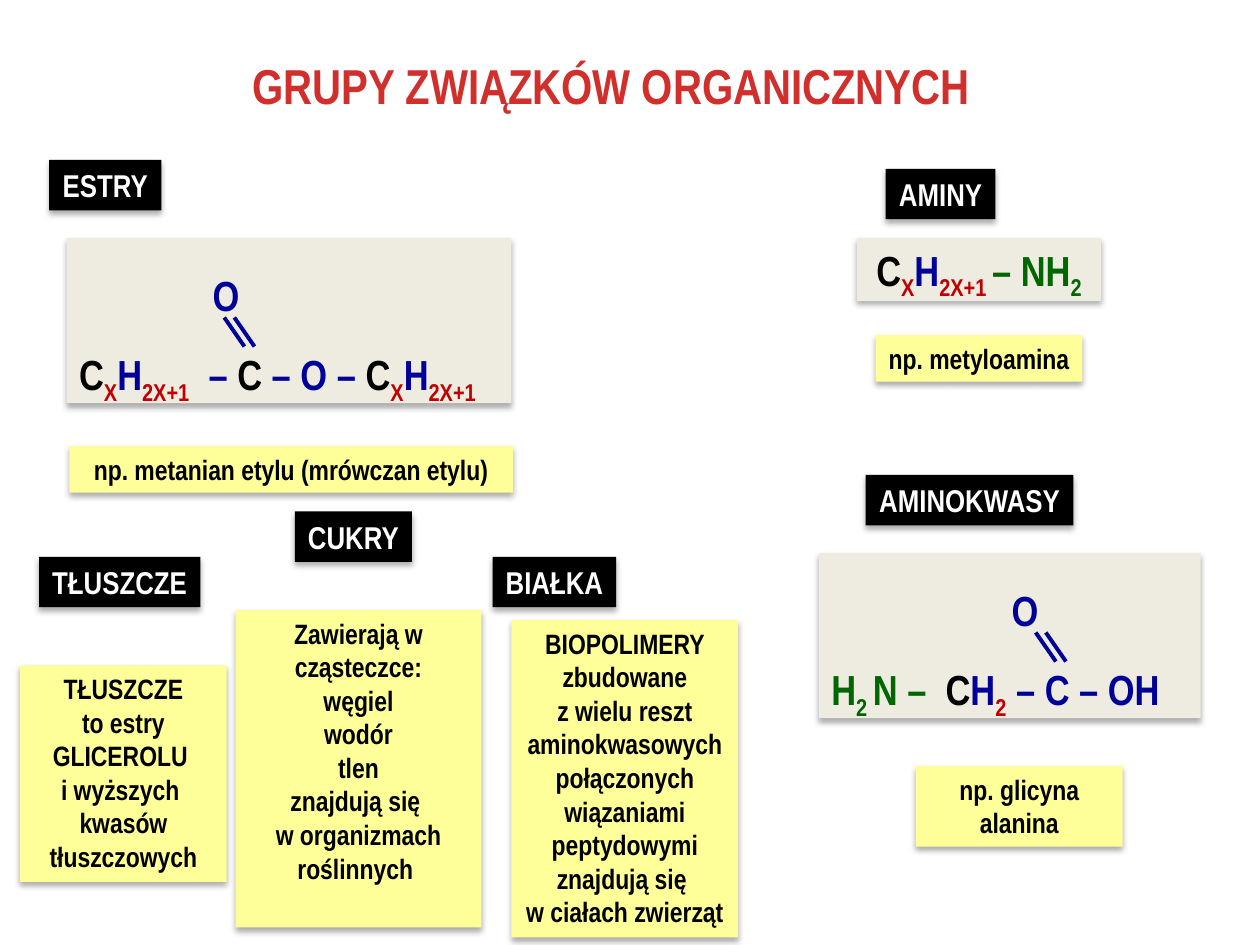
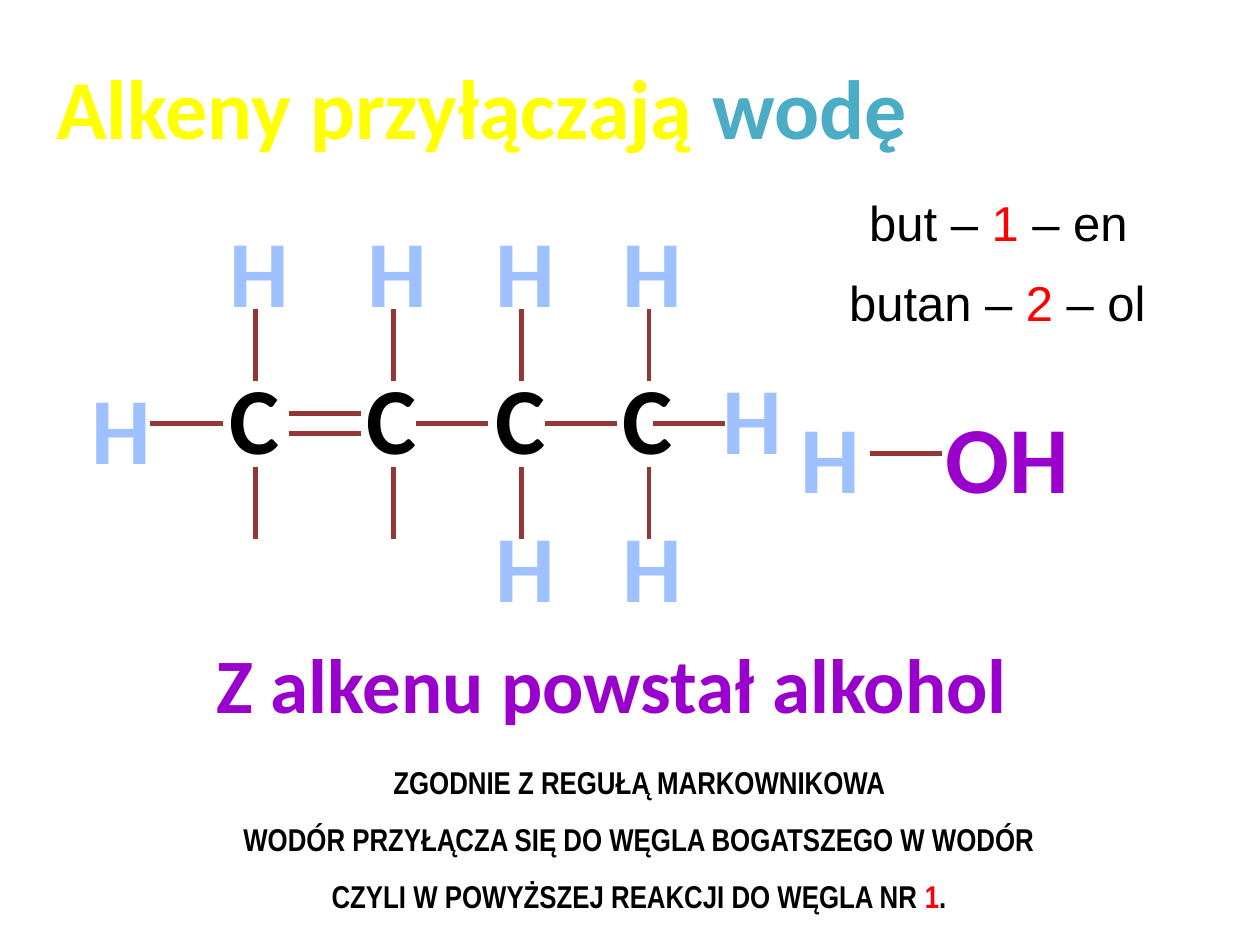
import pptx
import pptx.dml.color
import pptx.enum.shapes
import pptx.enum.text
import pptx.oxml
import pptx.oxml.ns
import pptx.util
from dataclasses import dataclass
from typing import Any, NamedTuple, Optional

Inches = pptx.util.Inches
Pt = pptx.util.Pt
ALIGN = pptx.enum.text.PP_ALIGN

COLORS = {
    "black": "000000", "white": "FFFFFF", "beige": "EEECE1", "paper": "FFFF99",
    "title": "D02F2C", "navy": "000099", "crimson": "C00000", "green": "006600",
    "yellow": "FFFF00", "water": "4BACC6", "hydrogen": "A0C1FF",
    "purple": "9900CC", "bond": "953735", "red": "FF0000",
}


class Run(NamedTuple):
    text: str
    color: Optional[str] = None
    subscript: bool = False
    spacing: float = 0  # extra points after each character


@dataclass(frozen=True)
class TextStyle:
    size: int
    color: str = "black"
    font: str = "Arial Narrow"
    bold: bool = True
    fill: Optional[str] = None
    wrap: bool = False
    align: Any = ALIGN.CENTER
    line_spacing: float = 1.0


class Box(NamedTuple):
    left: float
    top: float
    width: float
    height: float
    style: TextStyle
    paragraphs: list  # each a string or a list of runs


class Bond(NamedTuple):
    center_x: float
    center_y: float
    rotation: int = 0


class Carbonyl(NamedTuple):
    """Formula box with an oxygen joined by a double bond from above."""
    left: float
    top: float
    width: float
    oxygen_indent: float
    bond_left: float
    runs: list


HEADING = TextStyle(28, "title")
LABEL = TextStyle(18, "white", fill="black")
NOTE = TextStyle(16, fill="paper", wrap=True)
FORMULA = TextStyle(24, fill="beige")
CARBONYL = TextStyle(24, "navy", fill="beige", wrap=True, align=ALIGN.LEFT,
                     line_spacing=1.5)
ALKENE_TITLE = TextStyle(48, "yellow", "Calibri")
ALCOHOL_TITLE = TextStyle(44, "purple", "Calibri")
CARBON = TextStyle(54, "black", "Calibri")
HYDROGEN = TextStyle(54, "hydrogen", "Calibri")
HYDROXYL = TextStyle(54, "purple", "Calibri")
COMPOUND = TextStyle(28, font="Arial", bold=False, wrap=True, align=ALIGN.LEFT)
RULE = TextStyle(18, line_spacing=1.5)

ALKYL = [Run("C", "black"), Run("X", "crimson", True), Run("H", "navy"),
         Run("2X+1", "crimson", True)]
WIDE_SPACE = Run(" ", spacing=5.5)

GROUP_BOXES = [
    Box(1.87, 0.39, 5.96, 0.57, HEADING, ["GRUPY ZWIĄZKÓW ORGANICZNYCH"]),
    Box(0.39, 1.27, 0.89, 0.4, LABEL, ["ESTRY"]),
    Box(7.03, 1.34, 0.87, 0.4, LABEL, ["AMINY"]),
    Box(6.87, 3.77, 1.65, 0.4, LABEL, ["AMINOKWASY"]),
    Box(3.91, 4.42, 0.98, 0.4, LABEL, ["BIAŁKA"]),
    Box(2.34, 4.06, 0.93, 0.4, LABEL, ["CUKRY"]),
    Box(0.31, 4.42, 1.28, 0.4, LABEL, ["TŁUSZCZE"]),
    Box(6.8, 1.89, 1.94, 0.5, FORMULA,
        [ALKYL + [Run(" ", subscript=True), Run("– NH", "green"),
                  Run("2", "green", True)]]),
    Box(0.16, 5.28, 1.64, 1.72, NOTE,
        ["TŁUSZCZE", "to estry", "GLICEROLU ", "i wyższych ", "kwasów",
         "tłuszczowych"]),
    Box(4.06, 4.92, 1.8, 2.52, NOTE,
        ["BIOPOLIMERY", "zbudowane", "z wielu reszt", "aminokwasowych",
         "połączonych", "wiązaniami peptydowymi", "znajdują się ",
         "w ciałach zwierząt"]),
    Box(7.27, 6.08, 1.64, 0.64, NOTE, ["np. glicyna", "alanina"]),
    Box(6.95, 2.66, 1.64, 0.37, NOTE, ["np. metyloamina"]),
    Box(0.55, 3.54, 3.52, 0.37, NOTE, ["np. metanian etylu (mrówczan etylu)"]),
    Box(1.87, 4.84, 1.95, 2.52, NOTE,
        ["Zawierają w cząsteczce:", "węgiel", "wodór", "tlen",
         "znajdują się ", "w organizmach roślinnych "]),
]
CARBONYLS = [
    Carbonyl(0.53, 1.89, 3.53, 1.06, 1.78,
             ALKYL + [WIDE_SPACE, Run("– "), Run("C", "black"),
                      Run(" – O – ")] + ALKYL),
    Carbonyl(6.5, 4.39, 3.03, 1.43, 8.22,
             [Run("H", "green"), Run("2 ", "green", True), Run("N –", "green"),
              WIDE_SPACE, Run("C", "black"), Run("H"),
              Run("2", "crimson", True), Run(" – C – OH")]),
]

ALKENE_BOXES = [
    Box(0.31, 0.39, 7.02, 0.91, ALKENE_TITLE,
        [[Run("Alkeny przyłączają "), Run("wodę", "water")]]),
    Box(1.59, 5, 6.54, 0.84, ALCOHOL_TITLE, ["Z alkenu powstał alkohol"]),
    Box(6.8, 1.48, 2.34, 0.57, COMPOUND,
        [[Run("but – "), Run("1", "red"), Run(" – en")]]),
    Box(6.64, 2.11, 2.89, 0.57, COMPOUND,
        [[Run("butan – "), Run("2", "red"), Run(" – ol")]]),
    Box(1.8, 5.86, 6.6, 1.46, RULE,
        ["ZGODNIE Z REGUŁĄ MARKOWNIKOWA ",
         "WODÓR PRZYŁĄCZA SIĘ DO WĘGLA BOGATSZEGO W WODÓR ",
         [Run("CZYLI W POWYŻSZEJ REAKCJI DO WĘGLA NR "), Run("1", "red"),
          Run(". ")]]),
    Box(7.4, 3.12, 1.19, 1.01, HYDROXYL, ["OH"]),
]
CARBON_LEFTS = [1.72, 2.81, 3.83, 4.84]
CARBON_TOP = 2.81
UPPER_HYDROGEN_TOP = 1.64
LOWER_HYDROGEN_TOP = 3.98
SIDE_HYDROGENS = [(0.62, 2.89), (5.63, 2.81), (6.25, 3.12)]
BOND_LENGTH, BOND_THICKNESS = 0.78, 0.16
HORIZONTAL_BONDS = [
    Bond(1.48, 3.36), Bond(2.58, 3.28), Bond(2.58, 3.44, 180),
    Bond(3.59, 3.36), Bond(4.61, 3.36), Bond(5.47, 3.36), Bond(7.19, 3.6),
]


def rgb(name: str) -> pptx.dml.color.RGBColor:
    return pptx.dml.color.RGBColor.from_string(COLORS[name])


def set_attributes(target: Any, values: dict) -> None:
    for name, value in values.items():
        setattr(target, name, value)


def add_shadow(shape: Any) -> None:
    shape._element.spPr.append(pptx.oxml.parse_xml(
        f'<a:effectLst {pptx.oxml.ns.nsdecls("a")}>'
        f'<a:outerShdw blurRad="{Pt(3.5)}" dist="{Pt(2.2)}" dir="5400000" '
        f'rotWithShape="0"><a:srgbClr val="{COLORS["black"]}">'
        '<a:alpha val="32000"/></a:srgbClr></a:outerShdw></a:effectLst>'))


def add_run(paragraph: Any, run: Run, style: TextStyle) -> None:
    text_run = paragraph.add_run()
    text_run.text = run.text
    set_attributes(text_run.font, {
        "name": style.font, "size": Pt(style.size), "bold": style.bold})
    text_run.font.color.rgb = rgb(run.color or style.color)
    properties = text_run._r.get_or_add_rPr()
    if run.subscript:
        properties.set("baseline", "-25000")
    if run.spacing:
        properties.set("spc", str(round(run.spacing * 100)))


def add_box(slide: Any, box: Box) -> Any:
    style = box.style
    shape = slide.shapes.add_textbox(*(Inches(value) for value in box[:4]))
    if style.fill:
        shape.fill.solid()
        shape.fill.fore_color.rgb = rgb(style.fill)
        add_shadow(shape)
    frame = shape.text_frame
    set_attributes(frame, {
        "word_wrap": style.wrap,
        "auto_size": pptx.enum.text.MSO_AUTO_SIZE.NONE,
        "vertical_anchor": pptx.enum.text.MSO_ANCHOR.TOP,
    })
    for index, content in enumerate(box.paragraphs):
        paragraph = frame.add_paragraph() if index else frame.paragraphs[0]
        set_attributes(paragraph, {
            "alignment": style.align, "line_spacing": style.line_spacing})
        runs = [Run(content)] if isinstance(content, str) else content
        for run in runs:
            add_run(paragraph, run, style)
    return shape


def add_carbonyl(slide: Any, formula: Carbonyl) -> None:
    shape = add_box(slide, Box(formula.left, formula.top, formula.width, 1.31,
                               CARBONYL, ["O", formula.runs]))
    properties = shape.text_frame.paragraphs[0]._p.get_or_add_pPr()
    properties.set("marL", str(Inches(formula.oxygen_indent)))
    for offset in (0, 0.08):
        left = formula.bond_left + offset
        line = slide.shapes.add_connector(
            pptx.enum.shapes.MSO_CONNECTOR.STRAIGHT,
            Inches(left), Inches(formula.top + 0.63),
            Inches(left + 0.16), Inches(formula.top + 0.86))
        line.line.color.rgb = rgb("navy")
        line.line.width = Pt(2.25)
        line._element.spPr.append(
            pptx.oxml.parse_xml(f'<a:effectLst {pptx.oxml.ns.nsdecls("a")}/>'))


def add_bond(slide: Any, bond: Bond) -> None:
    shape = slide.shapes.add_shape(
        pptx.enum.shapes.MSO_SHAPE.MATH_MINUS,
        Inches(bond.center_x - BOND_LENGTH / 2),
        Inches(bond.center_y - BOND_THICKNESS / 2),
        Inches(BOND_LENGTH), Inches(BOND_THICKNESS))
    shape.rotation = bond.rotation
    shape.fill.solid()
    shape.fill.fore_color.rgb = rgb("bond")
    shape.line.fill.background()
    shape.shadow.inherit = False


def add_atom(slide: Any, symbol: str, left: float, top: float) -> None:
    width, style = {"C": (0.6, CARBON), "H": (0.68, HYDROGEN)}[symbol]
    add_box(slide, Box(left, top, width, 1.01, style, [symbol]))


def build_groups_slide(slide: Any) -> None:
    for formula in CARBONYLS:
        add_carbonyl(slide, formula)
    for box in GROUP_BOXES:
        add_box(slide, box)


def build_alkene_slide(slide: Any) -> None:
    for box in ALKENE_BOXES:
        add_box(slide, box)
    for index, left in enumerate(CARBON_LEFTS):
        add_atom(slide, "C", left, CARBON_TOP)
        add_atom(slide, "H", left, UPPER_HYDROGEN_TOP)
        if index >= 2:  # the double-bonded carbons keep free lower bonds
            add_atom(slide, "H", left, LOWER_HYDROGEN_TOP)
        for center_y in (2.74, 3.99):
            add_bond(slide, Bond(left + 0.31, center_y, 90))
    for left, top in SIDE_HYDROGENS:
        add_atom(slide, "H", left, top)
    for bond in HORIZONTAL_BONDS:
        add_bond(slide, bond)


def main() -> None:
    presentation = pptx.Presentation()
    set_attributes(presentation, {
        "slide_width": Inches(10), "slide_height": Inches(7.5)})
    blank = presentation.slide_layouts[6]
    for build in (build_groups_slide, build_alkene_slide):
        build(presentation.slides.add_slide(blank))
    presentation.save("out.pptx")


if __name__ == "__main__":
    main()
